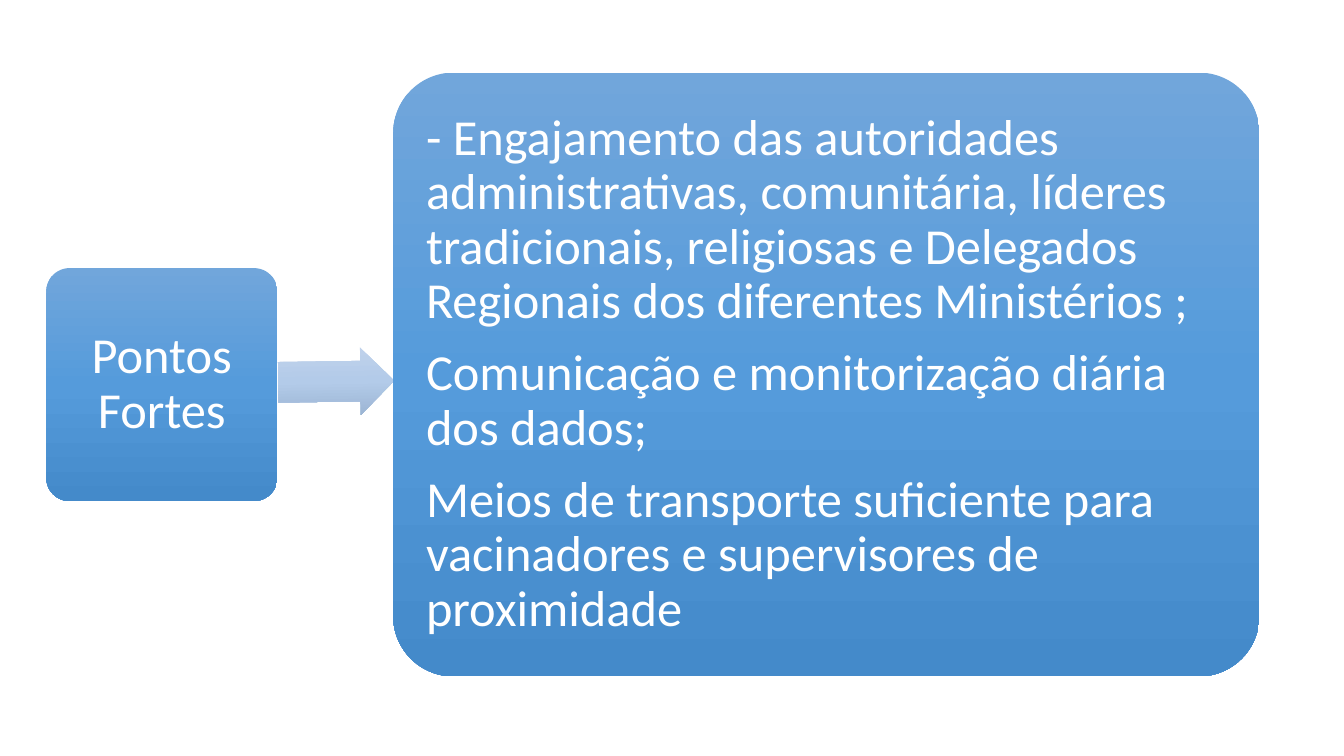
from lxml.etree import SubElement
from pptx import Presentation
from pptx.dml.color import RGBColor
from pptx.enum.shapes import MSO_SHAPE as Shape
from pptx.enum.text import MSO_ANCHOR as Anchor, PP_ALIGN as Align
from pptx.oxml.ns import qn
from pptx.util import Inches, Pt

WHITE = RGBColor(0xFF, 0xFF, 0xFF)
CARD_BLUES = (RGBColor(0x71, 0xA6, 0xDB), RGBColor(0x55, 0x9B, 0xDB), RGBColor(0x44, 0x8A, 0xCA))
ARROW_BLUES = (RGBColor(0xC0, 0xD2, 0xEB), RGBColor(0xB3, 0xCB, 0xE9), RGBColor(0x9B, 0xB4, 0xD3))

PAGE_WIDTH, PAGE_HEIGHT = 13.33, 7.5
TOPIC_BOX = (0.46, 2.66, 2.29, 2.31)
ARROW_BOX = (2.76, 3.45, 1.15, 0.67)
STRENGTHS_BOX = (3.9, 0.72, 8.59, 5.99)
FONT_SIZE = 36
FONT_FORMAT = {"name": "Calibri", "size": Pt(FONT_SIZE)}
PARA_FORMAT = {"line_spacing": 0.9, "space_after": Pt(0.35 * FONT_SIZE)}
INSET = Inches(0.15)
FRAME_FORMAT = {
    "word_wrap": True,
    "vertical_anchor": Anchor.MIDDLE,
    "margin_left": INSET,
    "margin_top": INSET,
    "margin_right": INSET,
    "margin_bottom": INSET,
}

TOPIC = ["Pontos Fortes"]
STRENGTHS = [
    "- Engajamento das autoridades administrativas, comunitária, líderes tradicionais, "
    "religiosas e Delegados Regionais dos diferentes Ministérios ;",
    "Comunicação e monitorização diária dos dados;",
    "Meios de transporte suficiente para vacinadores e supervisores de proximidade",
]


def apply_format(target, values):
    """Set every attribute named in a dict of format values."""
    for name, value in values.items():
        setattr(target, name, value)


def paint_gradient(shape, colors):
    """Fill a shape from top to bottom with evenly spaced colours."""
    shape.fill.gradient()
    shape.fill.gradient_angle = 270
    stops = shape.fill._xPr.find(qn("a:gradFill")).find(qn("a:gsLst"))
    for stop in list(stops):
        stops.remove(stop)
    for index, color in enumerate(colors):
        position = 100000 * index // (len(colors) - 1)
        stop = SubElement(stops, qn("a:gs"), pos=str(position))
        SubElement(stop, qn("a:srgbClr"), val=str(color))


def add_gradient_shape(page, kind, box, colors, adjustments):
    """Place a borderless gradient shape in the given box."""
    shape = page.shapes.add_shape(kind, *map(Inches, box))
    shape.shadow.inherit = False
    shape.line.fill.background()
    for index, value in enumerate(adjustments):
        shape.adjustments[index] = value
    paint_gradient(shape, colors)
    return shape


def add_card(page, box, texts, alignment):
    """Place a rounded card holding one paragraph per text."""
    card = add_gradient_shape(page, Shape.ROUNDED_RECTANGLE, box, CARD_BLUES, [0.1])
    frame = card.text_frame
    apply_format(frame, FRAME_FORMAT)
    for index, text in enumerate(texts):
        para = frame.add_paragraph() if index else frame.paragraphs[0]
        apply_format(para, {**PARA_FORMAT, "alignment": alignment})
        span = para.add_run()
        span.text = text
        apply_format(span.font, FONT_FORMAT)
        span.font.color.rgb = WHITE


def add_arrow(page, box):
    """Place the slightly tilted arrow between the cards."""
    arrow = add_gradient_shape(page, Shape.RIGHT_ARROW, box, ARROW_BLUES, [0.6, 0.5])
    arrow.rotation = 359.2


def main():
    """Build the strengths slide and save it."""
    deck = Presentation()
    apply_format(deck, {"slide_width": Inches(PAGE_WIDTH), "slide_height": Inches(PAGE_HEIGHT)})
    page = deck.slides.add_slide(deck.slide_layouts[6])
    add_card(page, TOPIC_BOX, TOPIC, Align.CENTER)
    add_arrow(page, ARROW_BOX)
    add_card(page, STRENGTHS_BOX, STRENGTHS, Align.LEFT)
    deck.save("out.pptx")


if __name__ == "__main__":
    main()
